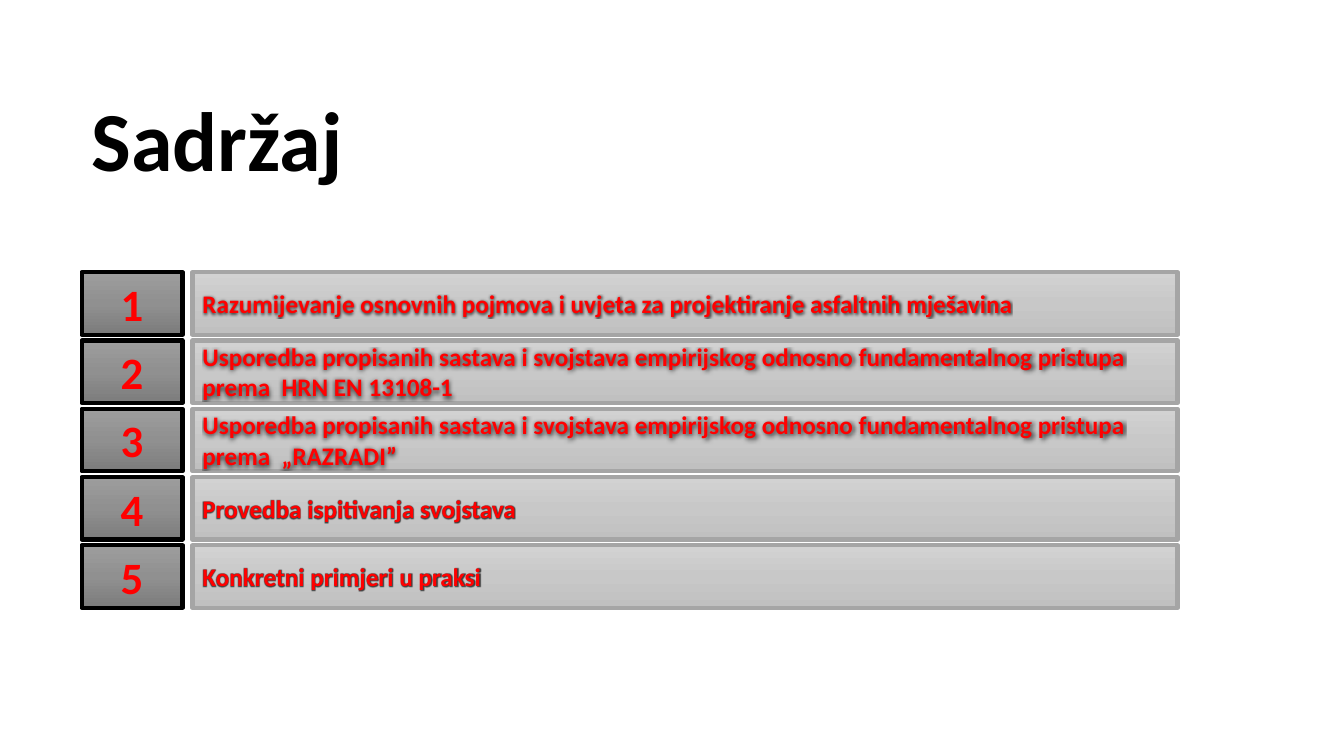
from pptx import Presentation
from pptx.dml.color import RGBColor
from pptx.enum.shapes import MSO_SHAPE
from pptx.enum.text import MSO_ANCHOR, PP_ALIGN
from pptx.oxml import parse_xml
from pptx.util import Inches, Pt

NS = 'xmlns:a="http://schemas.openxmlformats.org/drawingml/2006/main"'
TOPICS = [
    "Razumijevanje osnovnih pojmova i uvjeta za projektiranje asfaltnih mješavina",
    "Usporedba propisanih sastava i svojstava empirijskog odnosno fundamentalnog pristupa prema  HRN EN 13108-1",
    "Usporedba propisanih sastava i svojstava empirijskog odnosno fundamentalnog pristupa prema  „RAZRADI”",
    "Provedba ispitivanja svojstava",
    "Konkretni primjeri u praksi",
]
TOPIC_SHADES = ("D2D2D2", "C8C8C8", "C0C0C0")
NUMBER_SHADES = ("9D9D9D", "909090", "7C7C7C")


def color(value):
    return RGBColor.from_string(value)


def write(frame, text, size, text_color, align=PP_ALIGN.LEFT, glow=False):
    frame.word_wrap = True
    paragraph = frame.paragraphs[0]
    paragraph.alignment = align
    run = paragraph.add_run()
    run.text = text
    font = paragraph.font
    font.name = "Calibri"
    font.size = Pt(size)
    font.bold = True
    font.color.rgb = color(text_color)
    effects = run._r.get_or_add_rPr()
    effects.append(parse_xml(
        f'<a:ln {NS} w="9525"><a:solidFill><a:srgbClr val="FFFFFF"/></a:solidFill></a:ln>'))
    if glow:
        effects.append(parse_xml(
            f'<a:effectLst {NS}><a:glow rad="38100"><a:srgbClr val="404040"/></a:glow></a:effectLst>'))
    return paragraph


def add_title(slide, left, top, width, height):
    title = slide.shapes.add_textbox(Inches(left), Inches(top), Inches(width), Inches(height))
    write(title.text_frame, "Sadržaj", 60, "000000").line_spacing = 0.9


def add_panel(slide, left, top, width, height, shades, border):
    panel = slide.shapes.add_shape(
        MSO_SHAPE.RECTANGLE, Inches(left), Inches(top), Inches(width), Inches(height))
    panel.shadow.inherit = False
    stops = "".join(
        f'<a:gs pos="{i * 50000}"><a:srgbClr val="{shade}"/></a:gs>'
        for i, shade in enumerate(shades))
    gradient = parse_xml(
        f'<a:gradFill {NS} rotWithShape="1"><a:gsLst>{stops}</a:gsLst>'
        '<a:lin ang="5400000" scaled="0"/></a:gradFill>')
    panel._element.spPr.insert(2, gradient)
    panel.line.color.rgb = color(border)
    panel.line.width = Pt(3)
    panel.text_frame.vertical_anchor = MSO_ANCHOR.MIDDLE
    return panel.text_frame


def add_contents(slide, left, top, width, height):
    number_width, gap, row_height = 1, 0.1, 0.62
    pitch = (height - row_height) / (len(TOPICS) - 1)
    topic_offset = number_width + gap
    for i, topic in enumerate(TOPICS):
        row_top = top + i * pitch
        topic_frame = add_panel(slide, left + topic_offset, row_top,
                                width - topic_offset, row_height, TOPIC_SHADES, "A5A5A5")
        write(topic_frame, topic, 18, "FF0000", glow=True)
        number_frame = add_panel(slide, left, row_top, number_width, row_height,
                                 NUMBER_SHADES, "000000")
        write(number_frame, str(i + 1), 32, "FF0000", PP_ALIGN.CENTER)


def main():
    deck = Presentation()
    deck.slide_width = Inches(13.33)
    deck.slide_height = Inches(7.5)
    slide = deck.slides.add_slide(deck.slide_layouts[6])
    add_title(slide, 0.81, 0.93, 3.92, 0.89)
    add_contents(slide, 0.81, 2.7, 10.87, 3.33)
    deck.save("out.pptx")


if __name__ == "__main__":
    main()
